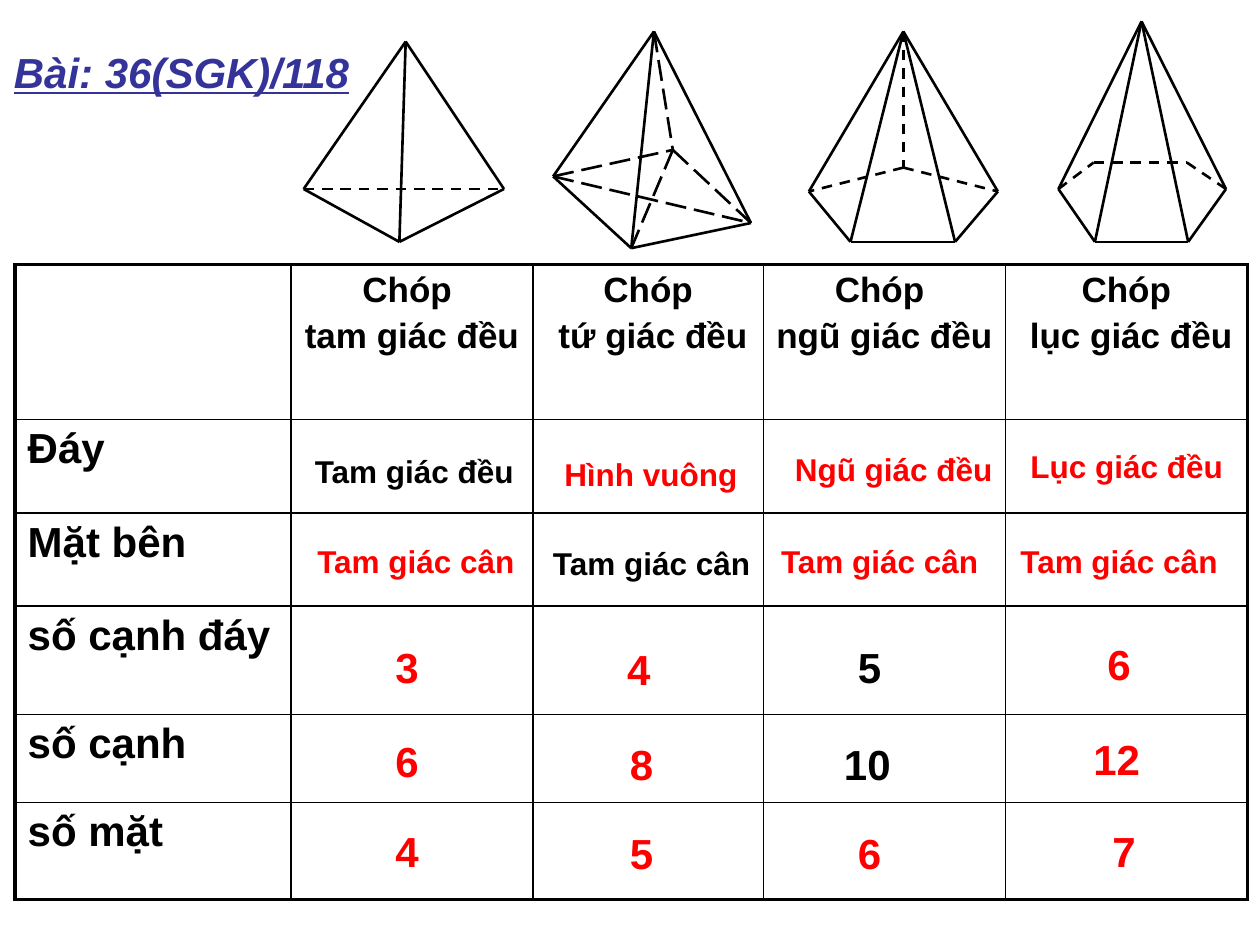
from lxml import etree
from pptx import Presentation
from pptx import util as u
from pptx.dml.color import RGBColor
from pptx.enum import dml, text
from pptx.oxml import ns

COLUMNS, ROWS = 1000, 750
BLACK, RED, INDIGO = "000000", "FF0000", "333399"
DASH, LONG_DASH = dml.MSO_LINE.DASH, dml.MSO_LINE.LONG_DASH

# Each pyramid: corners (S is the apex), visible edges, hidden edges, hidden dash
PYRAMIDS = [
    (dict(S=(322, 33), A=(241, 150), B=(317, 192), C=(400, 150)),
     "SA SB SC AB BC", "AC", DASH),
    (dict(S=(519, 25), A=(439, 140), B=(501, 197), C=(596, 177), D=(534, 119)),
     "SA SB SC AB BC", "SD AD DC AC DB", LONG_DASH),
    (dict(S=(717, 25), A=(642, 152), B=(675, 192), C=(758, 192), D=(792, 152),
          E=(717, 133)),
     "SA SB SC SD AB BC CD", "SE EA ED", DASH),
    (dict(S=(906, 17), A=(840, 150), B=(869, 192), C=(943, 192), D=(973, 150),
          E=(942, 129), F=(868, 129)),
     "SA SB SC SD AB BC CD", "AF FE ED", DASH),
]

HEADINGS = [[], ["Chóp ", "tam giác đều "], ["Chóp", " tứ giác đều"],
            ["Chóp ", "ngũ giác đều"], ["Chóp", " lục giác đều"]]
PROPERTIES = ["Đáy", "Mặt bên", "số cạnh đáy", "số cạnh", "số mặt"]
COLUMN_WIDTHS = [219, 192, 183, 192, 192]
ROW_HEIGHTS = [123, 74, 74, 86, 70, 77]

# One list per pyramid, in the order of PROPERTIES: words, left, top
ANSWERS = [
    [("Tam giác đều", 240, 354), ("Tam giác cân", 242, 425),
     ("3", 304, 504), ("6", 304, 579), ("4", 304, 650)],
    [("Hình vuông", 438, 356), ("Tam giác cân", 429, 427),
     ("4", 488, 506), ("8", 490, 581), ("5", 490, 652)],
    [("Ngũ giác đều", 621, 352), ("Tam giác cân", 610, 425),
     ("5", 671, 504), ("10", 660, 581), ("6", 671, 652)],
    [("Lục giác đều", 808, 350), ("Tam giác cân", 800, 425),
     ("6", 869, 502), ("12", 858, 577), ("7", 873, 650)],
]
GIVEN = {(0, 0), (1, 1), (2, 2), (2, 3)}  # (pyramid, property) already filled in


def rgb(color):
    return RGBColor.from_string(color)


def write(frame, lines, size=24, color=BLACK, align=text.PP_ALIGN.LEFT,
          italic=False, underline=False):
    for number, line in enumerate(lines):
        paragraph = frame.add_paragraph() if number else frame.paragraphs[0]
        paragraph.alignment = align
        paragraph.space_before = u.Pt(size * 0.2 if number else 0)
        run = paragraph.add_run()
        run.text = line
        font = run.font
        font.name, font.size, font.bold = "Arial", u.Pt(size), True
        font.italic, font.underline = italic, underline
        font.color.rgb = rgb(color)


def set_borders(cell, widths):
    """Draw left, right, top and bottom borders, widths in points."""
    properties = cell._tc.get_or_add_tcPr()
    for place, (side, width) in enumerate(zip("LRTB", widths)):
        border = etree.Element(ns.qn(f"a:ln{side}"), w=str(u.Pt(width)))
        fill = etree.SubElement(border, ns.qn("a:solidFill"))
        etree.SubElement(fill, ns.qn("a:srgbClr"), val=BLACK)
        properties.insert(place, border)


class Board:
    """The current slide, its grid and its style."""
    edge_width = 1.5
    inner_border, outer_border = 1, 2.25

    def __init__(self, deck):
        self.deck = deck
        self.slide = deck.slides.add_slide(deck.slide_layouts[5])

    def x(self, columns):
        return u.Emu(round(self.deck.slide_width * columns / COLUMNS))

    def y(self, rows):
        return u.Emu(round(self.deck.slide_height * rows / ROWS))

    def box(self, left, top, width, height):
        return self.x(left), self.y(top), self.x(width), self.y(height)

    def title(self, words, *place, **style):
        title = self.slide.shapes.title
        title.left, title.top, title.width, title.height = self.box(*place)
        frame = title.text_frame
        frame.vertical_anchor = text.MSO_ANCHOR.TOP
        frame.auto_size = text.MSO_AUTO_SIZE.SHAPE_TO_FIT_TEXT
        write(frame, [words], **style)

    def label(self, words, *place, **style):
        frame = self.slide.shapes.add_textbox(*self.box(*place)).text_frame
        frame.word_wrap = True
        frame.auto_size = text.MSO_AUTO_SIZE.SHAPE_TO_FIT_TEXT
        write(frame, [words], **style)

    def edge(self, group, start, end, dash):
        line = group.shapes.add_connector(
            1, self.x(start[0]), self.y(start[1]), self.x(end[0]), self.y(end[1]))
        line.line.color.rgb = rgb(BLACK)
        line.line.width = u.Pt(self.edge_width)
        if dash:
            line.line.dash_style = dash
        etree.SubElement(line._element.spPr, ns.qn("a:effectLst"))

    def pyramid(self, corners, visible, hidden, hidden_dash):
        group = self.slide.shapes.add_group_shape()
        for edges, dash in ((hidden, hidden_dash), (visible, None)):
            for start, end in edges.split():
                self.edge(group, corners[start], corners[end], dash)

    def table(self, left, top, widths, heights, headings, properties):
        table = self.slide.shapes.add_table(
            len(heights), len(widths),
            *self.box(left, top, sum(widths), sum(heights))).table
        table.first_row = table.horz_banding = False
        for column, width in zip(table.columns, widths):
            column.width = self.x(width)
        for row, height in zip(table.rows, heights):
            row.height = self.y(height)
        last_row, last_column = len(heights) - 1, len(widths) - 1
        for r in range(len(heights)):
            for c in range(len(widths)):
                cell = table.cell(r, c)
                cell.fill.background()
                on_rim = (c == 0, c == last_column, r == 0, r == last_row)
                set_borders(cell, [self.outer_border if rim else self.inner_border
                                   for rim in on_rim])
        for c, heading in enumerate(headings):
            write(table.cell(0, c).text_frame, heading, size=20,
                  align=text.PP_ALIGN.CENTER)
        for r, name in enumerate(properties, 1):
            write(table.cell(r, 0).text_frame, [name])


def main():
    deck = Presentation()
    deck.slide_width, deck.slide_height = u.Inches(10), u.Inches(7.5)
    board = Board(deck)
    board.title("Bài: 36(SGK)/118", 1, 32, 292, 50,
                color=INDIGO, italic=True, underline=True)
    board.table(12, 210, COLUMN_WIDTHS, ROW_HEIGHTS, HEADINGS, PROPERTIES)
    for pyramid in PYRAMIDS:
        board.pyramid(*pyramid)
    for p, answers in enumerate(ANSWERS):
        for q, (words, left, top) in enumerate(answers):
            width, height, size = (83, 50, 24) if words.isdigit() else (192, 40, 18)
            board.label(words, left, top, width, height, size=size,
                        color=BLACK if (p, q) in GIVEN else RED)
    deck.save("out.pptx")


if __name__ == "__main__":
    main()
